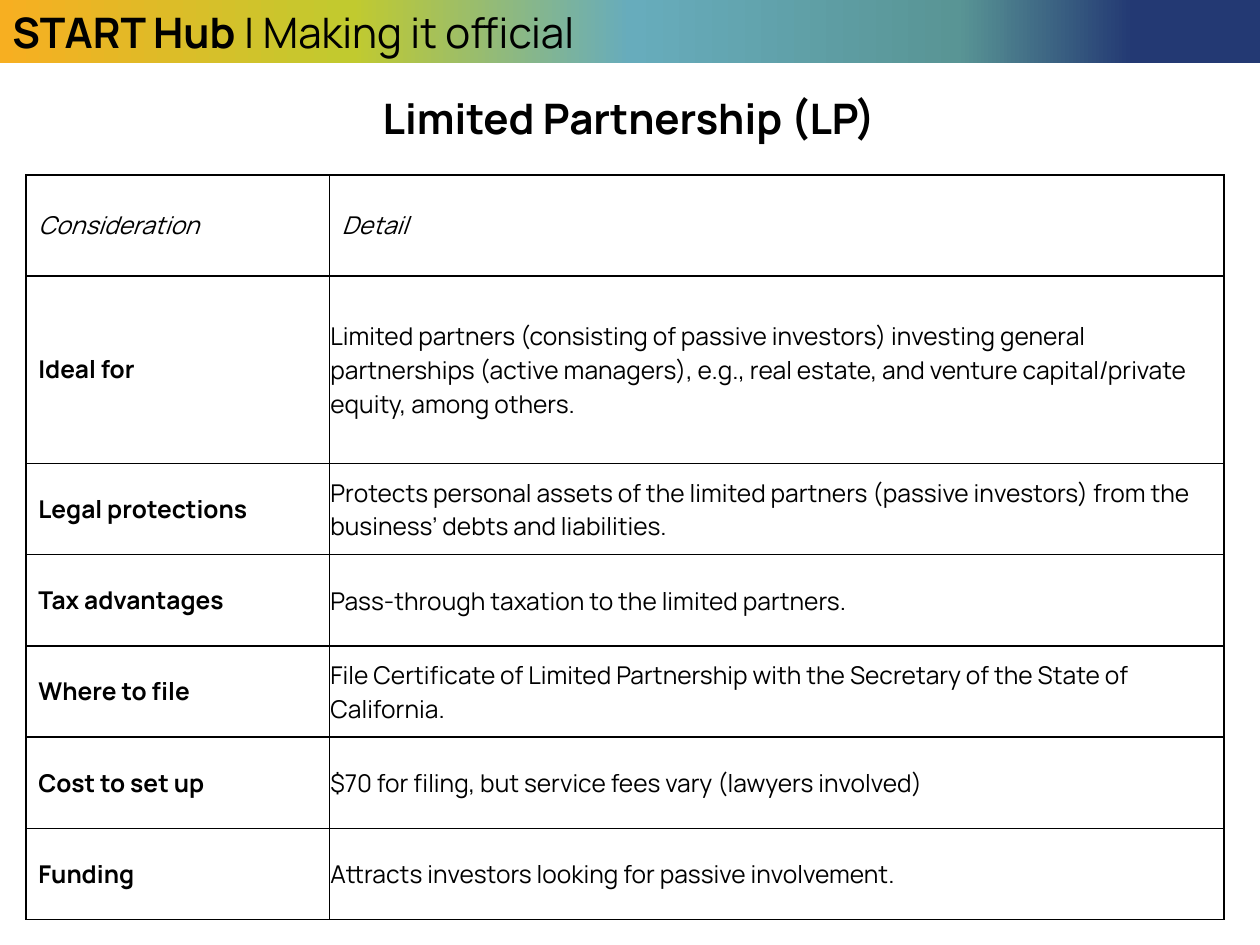
from lxml import etree
from pptx import Presentation
from pptx.dml.color import RGBColor
from pptx.enum import shapes, text
from pptx.oxml.ns import qn
from pptx.util import Cm, Pt

# Content
BANNER = [("START Hub ", True), ("| Making it official", False)]
TITLE = "Limited Partnership (LP)"
HEADER = ("Consideration", "Detail")
DETAILS = [
    ("Ideal for", "Limited partners (consisting of passive investors) investing general "
     "partnerships (active managers), e.g., real estate, and venture capital/private "
     "equity, among others."),
    ("Legal protections", "Protects personal assets of the limited partners (passive "
     "investors) from the business’ debts and liabilities."),
    ("Tax advantages", "Pass-through taxation to the limited partners."),
    ("Where to file", "File Certificate of Limited Partnership with the Secretary of the "
     "State of California."),
    ("Cost to set up", "$70 for filing, but service fees vary (lawyers involved)"),
    ("Funding", "Attracts investors looking for passive involvement."),
]

# Theme and measures (cm)
THEME = {
    "font": "Manrope", "ink": "000000", "paper": "FFFFFF",
    "heading": 24, "body": 14, "border": 1,
    "gradient": [(0, "F7AF21"), (28, "C1CA2F"), (50, "67ACBC"),
                 (76, "599595"), (90, "233973")],
}
PAGE_WIDTH, PAGE_HEIGHT, BAND_HEIGHT = 25.4, 19.05, 1.27
COLUMNS = [6.12, 18.03]
ROWS = [2.03, 3.78] + [1.84] * 5


def style(font, size, bold=False, italic=False):
    font.name, font.size = THEME["font"], Pt(size)
    font.bold, font.italic = bold, italic
    font.color.rgb = RGBColor.from_string(THEME["ink"])


def add_color(parent, color):
    etree.SubElement(parent, qn("a:srgbClr"), val=color)


def add_banner(page):
    band = page.shapes.add_shape(shapes.MSO_SHAPE.RECTANGLE, 0, 0,
                                 Cm(PAGE_WIDTH), Cm(BAND_HEIGHT))
    band.shadow.inherit = False
    band.line.fill.background()
    band.fill.gradient()
    band.fill.gradient_angle = 0
    stops = band.fill._fill._gradFill.find(qn("a:gsLst"))
    for stop in list(stops):
        stops.remove(stop)
    for position, color in THEME["gradient"]:
        add_color(etree.SubElement(stops, qn("a:gs"), pos=str(position * 1000)), color)

    frame = band.text_frame
    frame.vertical_anchor = text.MSO_ANCHOR.MIDDLE
    para = frame.paragraphs[0]
    para.alignment = text.PP_ALIGN.LEFT
    for words, bold in BANNER:
        span = para.add_run()
        span.text = words
        style(span.font, THEME["heading"], bold)


def add_title(page):
    title = page.shapes.title
    title.left, title.top, title.width, title.height = Cm(0.5), Cm(1.73), Cm(24.36), Cm(1.27)
    title.text_frame.text = TITLE
    title.text_frame.vertical_anchor = text.MSO_ANCHOR.MIDDLE
    para = title.text_frame.paragraphs[0]
    para.alignment = text.PP_ALIGN.CENTER
    style(para.font, THEME["heading"], bold=True)


def add_borders(cell):
    properties = cell._tc.get_or_add_tcPr()
    for index, side in enumerate(("lnL", "lnR", "lnT", "lnB")):
        line = etree.Element(qn(f"a:{side}"), w=str(Pt(THEME["border"])))
        add_color(etree.SubElement(line, qn("a:solidFill")), THEME["ink"])
        properties.insert(index, line)


def add_details(page):
    table = page.shapes.add_table(len(ROWS), len(COLUMNS), Cm(0.52), Cm(3.53),
                                  Cm(sum(COLUMNS)), Cm(sum(ROWS))).table
    for column, width in zip(table.columns, COLUMNS):
        column.width = Cm(width)
    for row, height in zip(table.rows, ROWS):
        row.height = Cm(height)
    for r, values in enumerate([HEADER] + DETAILS):
        for c, value in enumerate(values):
            cell = table.cell(r, c)
            cell.text = value
            cell.vertical_anchor = text.MSO_ANCHOR.MIDDLE
            cell.fill.solid()
            cell.fill.fore_color.rgb = RGBColor.from_string(THEME["paper"])
            add_borders(cell)
            is_header = r == 0
            style(cell.text_frame.paragraphs[0].font, THEME["body"],
                  bold=not is_header and c == 0, italic=is_header)
            if not is_header and c == 1:
                cell.margin_left = cell.margin_right = cell.margin_top = Cm(0.02)
                cell.margin_bottom = 0


def main():
    deck = Presentation()
    deck.slide_width, deck.slide_height = Cm(PAGE_WIDTH), Cm(PAGE_HEIGHT)
    page = deck.slides.add_slide(deck.slide_layouts[5])
    add_title(page)
    add_banner(page)
    add_details(page)
    deck.save("out.pptx")


if __name__ == "__main__":
    main()
